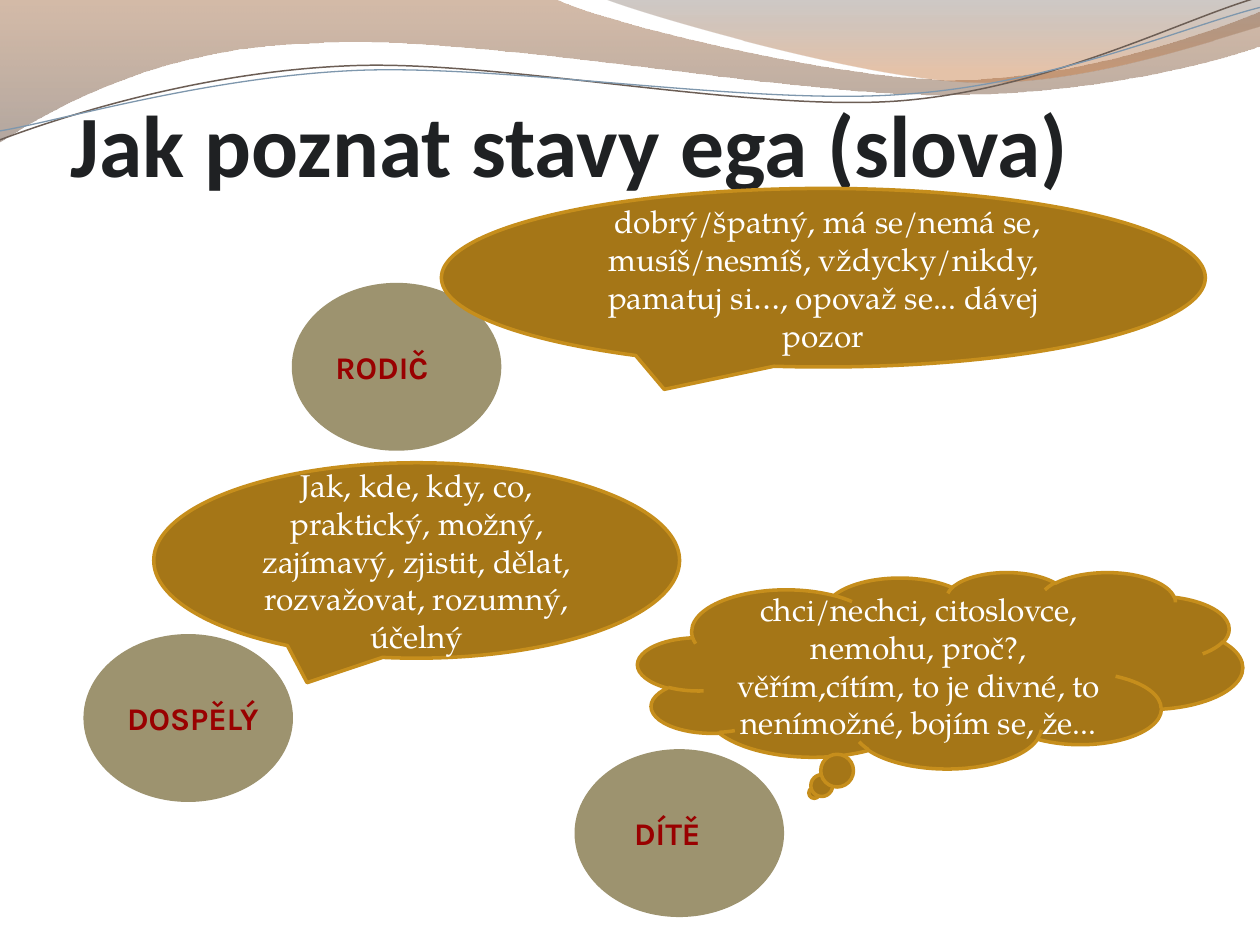
from lxml.etree import SubElement
from pptx import Presentation
from pptx.dml.color import RGBColor
from pptx.enum.shapes import MSO_SHAPE
from pptx.enum.text import MSO_ANCHOR, PP_ALIGN
from pptx.oxml.ns import qn
from pptx.util import Cm, Pt

TITLE = {"size": Pt(50), "name": "Calibri", "bold": True}
LABEL = {"size": Pt(18), "name": "Karla", "bold": True}
SPEECH = {"size": Pt(18), "name": "TeX Gyre Pagella", "bold": False}

BANDS = [
    ([(0, 0), (11.18, -0.03), (12.09, 0.43, 16.87, 1.6, 19.25, 1.6),
      (21.67, 1.6, 24.33, 0.66, 25.4, 0.23), (25.43, 0.91),
      (24.97, 1.12, 22.1, 1.93, 18.95, 1.91), (15.8, 1.91, 9.7, 0.71, 6.53, 0.86),
      (3.28, 0.91, 1.17, 2.11, -0.03, 2.87)],
     [(0, "9F683F", 45), (1, "755F51", 55)]),
    ([(12.17, -0.03), (12.93, 0.28, 17.32, 1.57, 19.53, 1.65),
      (21.74, 1.75, 24.41, 0.81, 25.4, 0.53), (25.4, 0)],
     [(0, "5D4E44", 30), (0.8, "C77A42", 45)]),
]
WAVES = [
    ([(-0.05, 2.22), (1.19, 1.82, 4.02, 1.04, 7.05, 1.06),
      (10.05, 1.07, 15.02, 2.37, 18.08, 2.29), (21.13, 2.2, 23.87, 0.91, 25.41, 0.55)],
     "6C5E55", 0.85),
    ([(-0.04, 2.04), (1.16, 1.9, 4.18, 1.15, 7.2, 1.16),
      (10.25, 1.18, 15.13, 2.25, 18.19, 2.16), (21.21, 2.1, 23.93, 1.06, 25.45, 0.75)],
     "7E97AD", 0.75),
]
STATES = [
    ("RODIČ", (5.9, 5.72), 0.25, MSO_SHAPE.OVAL_CALLOUT, (8.9, 3.8, 15.4, 3.6),
     " dobrý/špatný, má se/nemá se, musíš/nesmíš, vždycky/nikdy, "
     "pamatuj si…, opovaž se... dávej pozor"),
    ("DÍTĚ", (11.6, 15.12), 0.57, MSO_SHAPE.CLOUD_CALLOUT, (12.86, 11.53, 12.19, 3.96),
     "chci/nechci, citoslovce, nemohu, proč?, věřím,cítím, to je divné, "
     "to nenímožné, bojím se, že..."),
    ("DOSPĚLÝ", (1.7, 12.8), 0.25, MSO_SHAPE.OVAL_CALLOUT, (3.1, 9.33, 10.6, 3.94),
     "Jak, kde, kdy, co, praktický, možný, zajímavý, zjistit, dělat, "
     "rozvažovat, rozumný, účelný"),
]


def colour(value):
    """Turn a hex string into a colour."""
    return RGBColor.from_string(value)


def assign(target, values):
    """Set each attribute named in values on the target."""
    for name, value in values.items():
        setattr(target, name, value)


def write(shape, text, style, ink, align, frame_values):
    """Write one paragraph into a shape."""
    frame = shape.text_frame
    assign(frame, frame_values)
    para = frame.paragraphs[0]
    para.alignment = align
    span = para.add_run()
    span.text = text
    assign(span.font, style)
    span.font.color.rgb = colour(ink)


def paint(shape, fill, line, width):
    """Give a shape a plain fill and outline without shadow."""
    shape.shadow.inherit = False
    shape.fill.solid()
    shape.fill.fore_color.rgb = colour(fill)
    shape.line.color.rgb = colour(line)
    shape.line.width = Pt(width)


def add_outline(shapes, box, segments, close):
    """Draw straight and cubic segments relative to the box."""
    points = [(Cm(box[0] + segment[i]), Cm(box[1] + segment[i + 1]))
              for segment in segments for i in range(0, len(segment), 2)]
    builder = shapes.build_freeform(*points[0])
    builder.add_line_segments(points[1:], close=close)
    shape = builder.convert_to_shape()
    shape.shadow.inherit = False
    lines = iter(list(shape._element.iter(qn("a:lnTo"))))
    for segment in segments[1:]:
        first = next(lines)
        if len(segment) == 6:
            first.tag = qn("a:cubicBezTo")
            for line in (next(lines), next(lines)):
                first.append(line[0])
                line.getparent().remove(line)
    return shape


def add_header(page, box):
    """Draw the translucent bands and thin waves."""
    for segments, stops in BANDS:
        band = add_outline(page.shapes, box, segments, True)
        band.line.fill.background()
        band.fill.gradient()
        band.fill.gradient_angle = 270
        for stop, (position, tint, opacity) in zip(band.fill.gradient_stops, stops):
            stop.position = position
            stop.color.rgb = colour(tint)
        tints = list(band._element.spPr.iter(qn("a:srgbClr")))
        for element, (position, tint, opacity) in zip(tints, stops):
            SubElement(element, qn("a:alpha"), val=str(opacity * 1000))
    group = page.shapes.add_group_shape()
    for segments, tint, width in WAVES:
        wave = add_outline(group.shapes, box, segments, False)
        wave.rotation = 357.3
        wave.fill.background()
        wave.line.color.rgb = colour(tint)
        wave.line.width = Pt(width)


def add_title(page, box, text):
    """Place the slide title at the bottom of its box."""
    title = page.shapes.add_textbox(*map(Cm, box))
    write(title, text, TITLE, "1F2123", PP_ALIGN.LEFT,
          {"word_wrap": True, "vertical_anchor": MSO_ANCHOR.BOTTOM, "margin_left": 0,
           "margin_right": 0, "margin_top": Cm(0.13), "margin_bottom": 0})


def add_state(page, box, text, inset):
    """Draw the labelled ellipse of an ego state."""
    state = page.shapes.add_shape(MSO_SHAPE.OVAL, *map(Cm, box))
    paint(state, "9D936F", "9D936F", 1)
    write(state, text, LABEL, "990000", PP_ALIGN.LEFT,
          {"word_wrap": False, "vertical_anchor": MSO_ANCHOR.MIDDLE, "margin_left": Cm(inset)})


def add_speech(page, box, kind, text):
    """Draw a callout with the words of an ego state."""
    speech = page.shapes.add_shape(kind, *map(Cm, box))
    paint(speech, "A57617", "C68E1C", 2)
    write(speech, text, SPEECH, "FFFFFF", PP_ALIGN.CENTER,
          {"word_wrap": True, "vertical_anchor": MSO_ANCHOR.MIDDLE})


def main():
    """Build the slide and save the deck."""
    deck = Presentation()
    assign(deck, {"slide_width": Cm(25.4), "slide_height": Cm(19.05)})
    page = deck.slides.add_slide(deck.slide_layouts[6])
    add_header(page, (0, 0))
    add_title(page, (1.42, 0.76, 22.86, 3.18), "Jak poznat stavy ega (slova)")
    for label, corner, inset, kind, box, words in STATES:
        add_state(page, (*corner, 4.19, 3.35), label, inset)
        add_speech(page, box, kind, words)
    deck.save("out.pptx")


if __name__ == "__main__":
    main()
